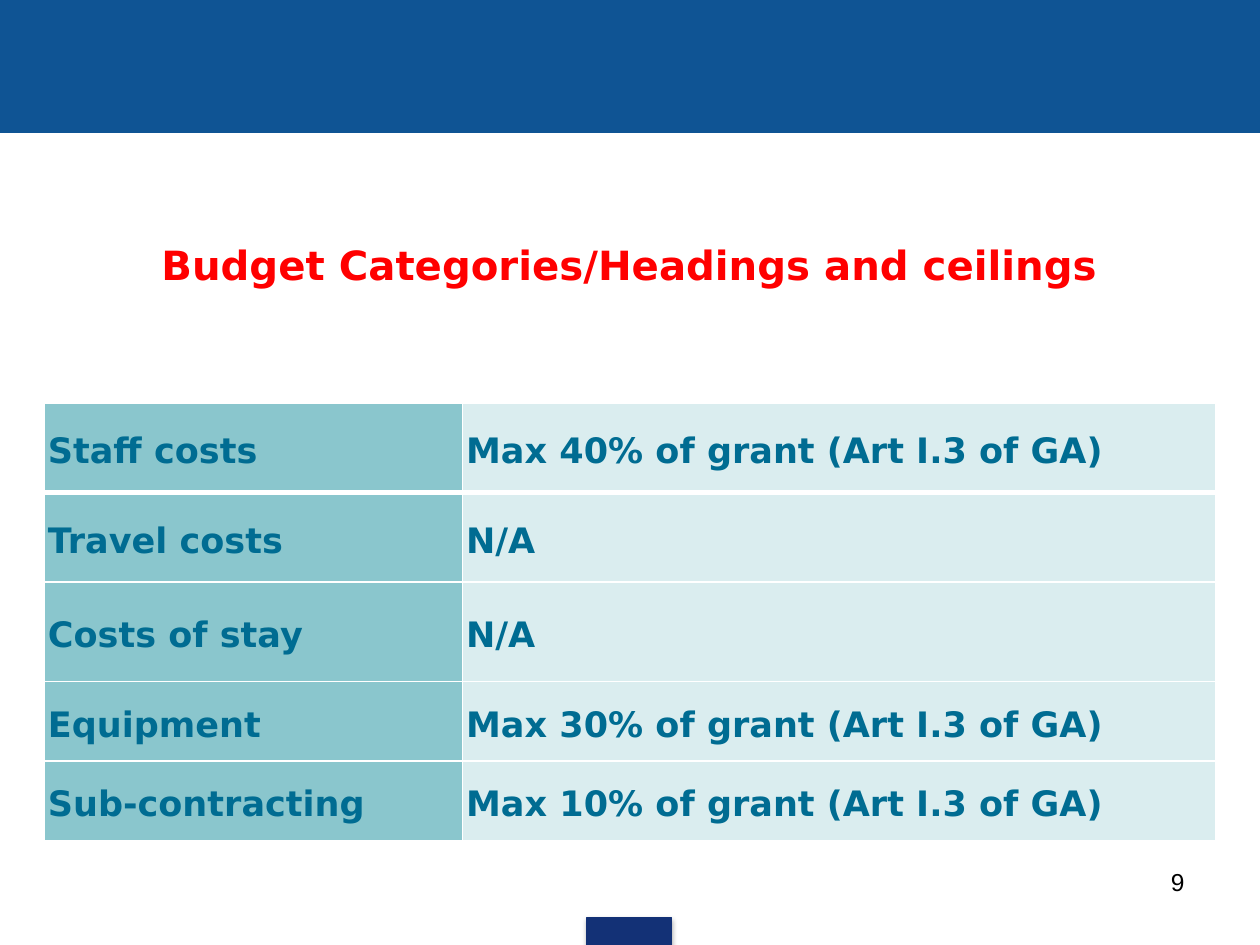
from dataclasses import dataclass

import pptx
import pptx.dml.color
import pptx.enum.shapes
import pptx.enum.text
import pptx.oxml
import pptx.oxml.ns
import pptx.util
from pptx.util import Inches

ANCHOR = pptx.enum.text.MSO_ANCHOR
ALIGN = pptx.enum.text.PP_ALIGN


@dataclass(frozen=True)
class Theme:
    header: str = "0F5494"
    footer: str = "133176"
    title: str = "FF0000"
    table_text: str = "006C92"
    label_fill: str = "8AC6CD"
    value_fill: str = "DAEDEF"
    border: str = "FFFFFF"
    number: str = "000000"
    font: str = "DejaVu Sans"
    number_font: str = "Arial"
    title_size: int = 23
    table_size: int = 20
    number_size: int = 14


THEME = Theme()

BUDGET_ROWS = [
    ("Staff costs", "Max 40% of grant (Art I.3 of GA)", 0.71),
    ("Travel costs", "N/A", 0.71),
    ("Costs of stay", "N/A", 0.79),
    ("Equipment", "Max 30% of grant (Art I.3 of GA)", 0.63),
    ("Sub-contracting", "Max 10% of grant (Art I.3 of GA)", 0.63),
]
COLUMN_WIDTHS = (3.32, 5.98)


def rgb(value):
    return pptx.dml.color.RGBColor.from_string(value)


def write_text(frame, text, *, size, color, font=THEME.font, bold=False,
               align=ALIGN.LEFT, anchor=ANCHOR.MIDDLE, spacing=1.0):
    frame.word_wrap = True
    frame.vertical_anchor = anchor
    paragraph = frame.paragraphs[0]
    paragraph.alignment = align
    paragraph.line_spacing = spacing
    run = paragraph.add_run()
    run.text = text
    run.font.name = font
    run.font.size = pptx.util.Pt(size)
    run.font.bold = bold
    run.font.color.rgb = rgb(color)


def add_block(slide, left, top, width, height, color):
    shape = slide.shapes.add_shape(
        pptx.enum.shapes.MSO_SHAPE.RECTANGLE,
        Inches(left), Inches(top), Inches(width), Inches(height))
    shape.shadow.inherit = False
    shape.fill.solid()
    shape.fill.fore_color.rgb = rgb(color)
    shape.line.color.rgb = rgb(color)
    shape.line.width = pptx.util.Pt(0.75)
    return shape


def add_soft_shadow(shape):
    effects = shape._element.spPr.find(pptx.oxml.ns.qn("a:effectLst"))
    effects.append(pptx.oxml.parse_xml(
        f'<a:outerShdw {pptx.oxml.ns.nsdecls("a")} blurRad="{pptx.util.Pt(3.1)}" '
        f'dist="{pptx.util.Pt(1.8)}" dir="5400000" rotWithShape="0">'
        '<a:srgbClr val="000000"><a:alpha val="35000"/></a:srgbClr></a:outerShdw>'))


def set_borders(cell, **widths):
    properties = cell._tc.get_or_add_tcPr()
    for side in "LRTB":
        properties.append(pptx.oxml.parse_xml(
            f'<a:ln{side} {pptx.oxml.ns.nsdecls("a")} '
            f'w="{pptx.util.Pt(widths.get(side, 1))}"><a:solidFill>'
            f'<a:srgbClr val="{THEME.border}"/></a:solidFill></a:ln{side}>'))


def add_title(slide, text):
    title = slide.shapes.title
    title.left, title.top = Inches(0.35), Inches(1.47)
    title.width, title.height = Inches(9.3), Inches(1.26)
    write_text(title.text_frame, text, size=THEME.title_size,
               color=THEME.title, bold=True, align=ALIGN.CENTER)


def add_budget_table(slide):
    height = sum(row[2] for row in BUDGET_ROWS)
    table = slide.shapes.add_table(
        len(BUDGET_ROWS), len(COLUMN_WIDTHS), Inches(0.35), Inches(3.2),
        Inches(sum(COLUMN_WIDTHS)), Inches(height)).table
    table.first_row = table.horz_banding = False
    for column, width in zip(table.columns, COLUMN_WIDTHS):
        column.width = Inches(width)

    # The first row is set off by a thicker rule
    thick_sides = {0: {"B": 3}, 1: {"T": 3}}
    fills = (THEME.label_fill, THEME.value_fill)
    for index, (label, value, row_height) in enumerate(BUDGET_ROWS):
        table.rows[index].height = Inches(row_height)
        for cell, text, fill in zip(table.rows[index].cells, (label, value), fills):
            set_borders(cell, **thick_sides.get(index, {}))
            cell.fill.solid()
            cell.fill.fore_color.rgb = rgb(fill)
            cell.margin_left = cell.margin_right = Inches(0.03)
            cell.margin_top, cell.margin_bottom = Inches(0.01), 0
            cell.vertical_anchor = ANCHOR.MIDDLE
            write_text(cell.text_frame, text, size=THEME.table_size,
                       color=THEME.table_text, bold=True, spacing=1.15)


def add_page_number(slide, text):
    box = slide.shapes.add_textbox(
        Inches(7.17), Inches(6.83), Inches(2.33), Inches(0.52))
    write_text(box.text_frame, text, size=THEME.number_size, color=THEME.number,
               font=THEME.number_font, align=ALIGN.RIGHT, anchor=ANCHOR.TOP)


def main():
    presentation = pptx.Presentation()
    presentation.slide_width, presentation.slide_height = Inches(10), Inches(7.5)
    slide = presentation.slides.add_slide(presentation.slide_layouts[5])

    # Header band and footer block
    add_block(slide, 0, 0, 10, 1.05, THEME.header)
    add_soft_shadow(add_block(slide, 4.66, 7.28, 0.67, 0.22, THEME.footer))

    # Content
    add_budget_table(slide)
    add_title(slide, "Budget Categories/Headings and ceilings")
    add_page_number(slide, "9")

    presentation.save("out.pptx")


if __name__ == "__main__":
    main()
